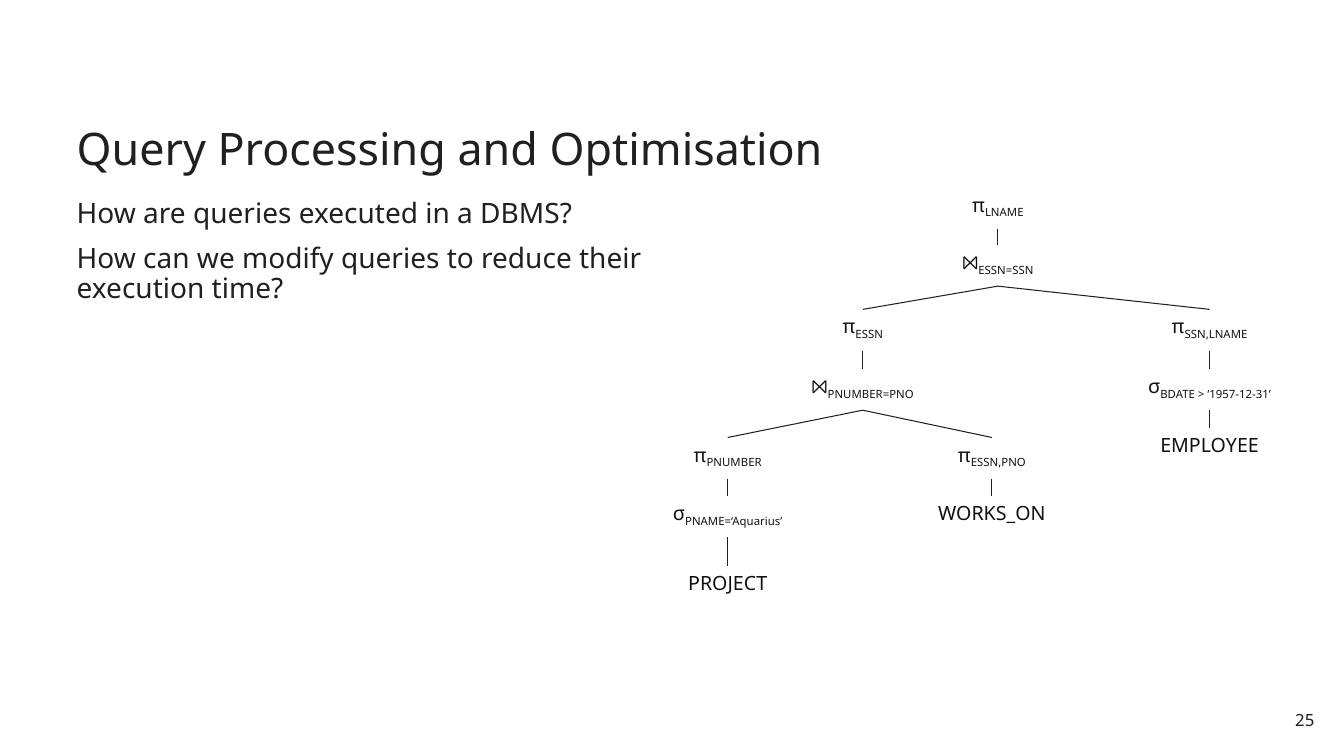
from collections import namedtuple

from lxml import etree
from pptx import Presentation
from pptx.dml.color import RGBColor
from pptx.enum import shapes, text
from pptx.oxml import ns
from pptx.util import Pt

COLORS = {"ink": "231F20", "node": "121010"}
FONT = "Noto Sans"
NODE_WIDTH, NODE_HEIGHT = 137.5, 29.5
Box = namedtuple("Box", "left top width height")
Node = namedtuple("Node", "symbol label x y children", defaults=[()])

# Node positions are the top centre, relative to the tree's box.
QUERY_TREE = Node("π", "LNAME", 261.4, 0, (
    Node("⨝", "ESSN=SSN", 261.4, 41, (
        Node("π", "ESSN", 164.9, 87.1, (
            Node("⨝", "PNUMBER=PNO", 164.9, 129.6, (
                Node("π", "PNUMBER", 68.4, 178.6, (
                    Node("σ", "PNAME=‘Aquarius’", 68.4, 220.3, (
                        Node("PROJECT", "", 68.4, 270.7),)),)),
                Node("π", "ESSN,PNO", 257.1, 178.6, (
                    Node("WORKS_ON", "", 257.1, 220.3),)),
            )),)),
        Node("π", "SSN,LNAME", 412.6, 87.1, (
            Node("σ", "BDATE > ‘1957-12-31’", 412.6, 129.6, (
                Node("EMPLOYEE", "", 412.6, 172.1),)),)),
    )),))


def add_text(page, box, paragraphs, size, color="ink", align=text.PP_ALIGN.LEFT,
             anchor=text.MSO_ANCHOR.TOP, spacing=1.0, gap=0, inset=(7.2, 3.6)):
    """Each paragraph is a list of (words, baseline shift in percent)."""
    frame = page.shapes.add_textbox(*map(Pt, box)).text_frame
    frame.word_wrap = True
    frame.vertical_anchor = anchor
    frame.margin_left = frame.margin_right = Pt(inset[0])
    frame.margin_top = frame.margin_bottom = Pt(inset[1])
    for index, pieces in enumerate(paragraphs):
        para = frame.add_paragraph() if index else frame.paragraphs[0]
        para.alignment = align
        para.line_spacing = spacing
        para.space_before = Pt(gap if index else 0)
        for words, shift in pieces:
            span = para.add_run()
            span.text = words
            span.font.name = FONT
            span.font.size = Pt(size)
            span.font.color.rgb = RGBColor.from_string(COLORS[color])
            if shift:
                span.font._element.set("baseline", str(shift * 1000))


def add_branch(page, start, end):
    line = page.shapes.add_connector(
        shapes.MSO_CONNECTOR.STRAIGHT, *map(Pt, start + end))
    line.line.color.rgb = RGBColor.from_string(COLORS["ink"])
    line.line.width = Pt(0.75)
    etree.SubElement(line._element.spPr, ns.qn("a:effectLst"))


def add_title(page, box):
    add_text(page, box, [[("Query Processing and Optimisation", 0)]], 32,
             anchor=text.MSO_ANCHOR.BOTTOM, spacing=0.9, inset=(5.76, 2.88))


def add_questions(page, box):
    questions = ["How are queries executed in a DBMS?",
                 "How can we modify queries to reduce their execution time?"]
    add_text(page, box, [[(question, 0)] for question in questions], 20,
             spacing=0.9, gap=10, inset=(5.76, 2.88))


def add_tree(page, box, node):
    """Draws the node, then its branches and subtrees."""
    x, y = box.left + node.x, box.top + node.y
    pieces = [(node.symbol, 0)]
    if node.label:
        pieces.append((node.label, -25))
    add_text(page, Box(x - NODE_WIDTH / 2, y, NODE_WIDTH, NODE_HEIGHT), [pieces],
             14, color="node", align=text.PP_ALIGN.CENTER)
    for child in node.children:
        add_branch(page, (x, y + NODE_HEIGHT),
                   (box.left + child.x, box.top + child.y))
        add_tree(page, box, child)


def add_page_number(page, box):
    add_text(page, box, [[("25", 0)]], 12, align=text.PP_ALIGN.RIGHT,
             inset=(5.76, 4.32))


def main():
    deck = Presentation()
    deck.slide_width, deck.slide_height = Pt(960), Pt(540)
    page = deck.slides.add_slide(deck.slide_layouts[6])
    add_title(page, Box(49, 54.7, 861.8, 73.4))
    add_questions(page, Box(49, 139.7, 425.5, 351.4))
    add_tree(page, Box(451.4, 133.9, 481.7, 300.2), QUERY_TREE)
    add_page_number(page, Box(910.8, 502.6, 33.8, 22.3))
    deck.save("out.pptx")


if __name__ == "__main__":
    main()
